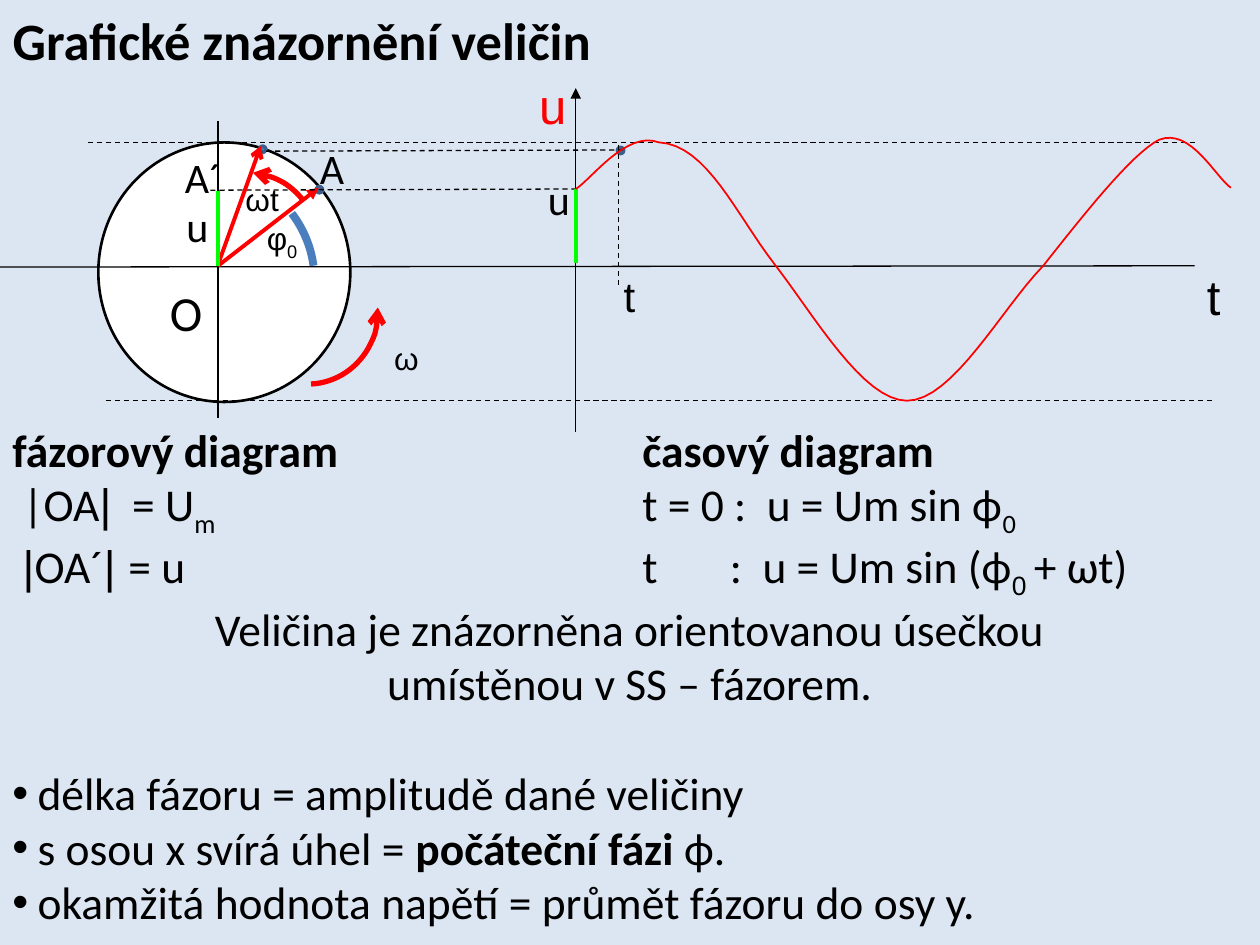
"""Build the slide on phasor and time diagrams of an alternating quantity."""
from lxml import etree
from pptx import Presentation
from pptx import util as u
from pptx.dml.color import RGBColor
from pptx.enum import dml, shapes, text
from pptx.oxml import ns

COLORS = {"back": "DCE6F2", "black": "000000", "white": "FFFFFF", "red": "FF0000",
          "green": "00FF00", "arc": "4B7EBC", "dot": "4F81BD", "rim": "3A5F8C"}


def stroke(shape, color, width, dashed=False, **ends):
    shape.line.color.rgb = RGBColor.from_string(COLORS[color])
    shape.line.width = u.Pt(width)
    if dashed:
        shape.line.dash_style = dml.MSO_LINE.DASH
    for end, kind in ends.items():
        etree.SubElement(shape.line._ln, ns.qn(f"a:{end}End"), type=kind)
    etree.SubElement(shape._element.spPr, ns.qn("a:effectLst"))


def add_span(para, words, size, font="Calibri", color="black", bold=False, sub=False):
    span = para.add_run()
    span.text = words
    for name, value in {"size": u.Pt(size), "name": font, "bold": bold}.items():
        setattr(span.font, name, value)
    span.font.color.rgb = RGBColor.from_string(COLORS[color])
    if sub:
        span.font._element.set("baseline", "-25000")


deck = Presentation()
deck.slide_width, deck.slide_height = u.Pt(720), u.Pt(540)
page = deck.slides.add_slide(deck.slide_layouts[5])
page.background.fill.solid()
page.background.fill.fore_color.rgb = RGBColor.from_string(COLORS["back"])

title = page.shapes.title
for name, value in {"left": 0, "top": 0.7, "width": 720, "height": 44}.items():
    setattr(title, name, u.Pt(value))
title.text_frame.vertical_anchor = text.MSO_ANCHOR.MIDDLE
title.text_frame.paragraphs[0].alignment = text.PP_ALIGN.LEFT
add_span(title.text_frame.paragraphs[0], "Grafické znázornění veličin", 30, bold=True)

ellipses = [(56.2, 81.4, 144, 148.3, "white", "black", 1.5)]
ellipses += [(x, y, 3.6, 3.6, "dot", "rim", 2)
             for x, y in [(180.7, 106.6), (148.3, 83.5), (352.8, 84.2)]]
for left, top, width, height, fill, rim, weight in ellipses:
    ellipse = page.shapes.add_shape(shapes.MSO_SHAPE.OVAL, u.Pt(left), u.Pt(top),
                                    u.Pt(width), u.Pt(height))
    ellipse.fill.solid()
    ellipse.fill.fore_color.rgb = RGBColor.from_string(COLORS[fill])
    stroke(ellipse, rim, weight)

thin, dashed = ("black", 0.75), ("black", 0.75, True)
lines = [
    (0, 152.6, 682.6, 151.9, thin, {}),
    (329, 247, 329, 50.4, thin, {"tail": "triangle"}),
    (50.4, 81.4, 682.6, 81.4, dashed, {}),
    (60.5, 229, 692.6, 229, dashed, {}),
    (124.6, 239, 124.6, 69.1, ("black", 1), {}),
    (124.6, 151.9, 182.2, 107.3, ("red", 2.25), {"tail": "triangle"}),
    (120.2, 108.7, 329, 108, dashed, {}),
    (146.9, 86.4, 355.7, 85.7, dashed, {}),
    (353.5, 82.8, 353.5, 163.4, dashed, {}),
    (124.6, 151.2, 149, 83.5, ("red", 2.25), {"tail": "arrow"}),
    (124.6, 109.4, 124.6, 151.9, ("green", 2.25), {}),
    (329, 108, 329, 150.5, ("green", 2.25), {}),
]
for x1, y1, x2, y2, look, ends in lines:
    line = page.shapes.add_connector(shapes.MSO_CONNECTOR.STRAIGHT,
                                     u.Pt(x1), u.Pt(y1), u.Pt(x2), u.Pt(y2))
    stroke(line, *look, **ends)

knots = [(329, 108), (337, 103.7), (357.8, 74.2), (376.6, 81.4), (403.9, 82.8),
         (420.5, 122.4), (442.8, 151.2), (465.1, 180), (493.2, 229), (518.4, 229),
         (544.3, 229), (572.4, 176.4), (596.2, 151.9), (617.8, 124.6), (646.6, 87.8),
         (662.4, 79.9), (680.4, 72.7), (694.8, 101.5), (703.4, 107.3)]
steps = 16
points = []
for first in range(0, len(knots) - 1, 3):
    for step in range(1, steps + 1):
        t = step / steps
        weights = [(1 - t) ** 3, 3 * t * (1 - t) ** 2, 3 * t * t * (1 - t), t ** 3]
        points.append([u.Pt(sum(w * knot[axis] for w, knot in zip(weights, knots[first:])))
                       for axis in (0, 1)])
builder = page.shapes.build_freeform(u.Pt(knots[0][0]), u.Pt(knots[0][1]))
builder.add_line_segments(points, close=False)
wave = builder.convert_to_shape()
wave.fill.background()
stroke(wave, "red", 1)

arcs = [
    (67.7, 101.5, 115.9, 103, 52.9, (162, 183.51), ("arc", 4.5), {}),
    (133.9, 137.5, 83.5, 80.6, 87.1, (162, 0), ("red", 3), {"head": "arrow"}),
    (97.9, 98.6, 83.5, 80.6, 345.2, (175.11, 203.2), ("red", 3), {"head": "arrow"}),
]
for left, top, width, height, turn, angles, look, ends in arcs:
    arc = page.shapes.add_shape(shapes.MSO_SHAPE.ARC, u.Pt(left), u.Pt(top),
                                u.Pt(width), u.Pt(height))
    arc.rotation = turn
    arc.adjustments[0], arc.adjustments[1] = angles
    arc.fill.background()
    stroke(arc, *look, **ends)

labels = [
    (90, 157.7, 44.6, "O", 28, "Calibri", "black"),
    (175.7, 77.8, 44.6, "A", 24, "Calibri", "black"),
    (98.6, 82.8, 43.2, "A´", 24, "Calibri", "black"),
    (301, 39.6, 28.1, "u", 28, "Arial", "red"),
    (682.6, 149, 28.1, "t", 28, "Arial", "black"),
    (145.4, 121.7, 33.1, "φ", 18, "Arial", "black"),
    (218.2, 190.1, 28.8, "ω", 18, "Arial", "black"),
    (133.2, 99.4, 33.8, "ωt", 18, "Arial", "black"),
    (99.4, 110.9, 44.6, "u", 24, "Calibri", "black"),
    (306, 95.8, 44.6, "u", 24, "Calibri", "black"),
    (349.2, 151.2, 28.1, "t", 24, "Arial", "black"),
]
for left, top, width, words, size, font, color in labels:
    box = page.shapes.add_textbox(u.Pt(left), u.Pt(top), u.Pt(width), u.Pt(1.2 * size + 7.4))
    box.text_frame.word_wrap = size > 18
    para = box.text_frame.paragraphs[0]
    add_span(para, words, size, font, color)
    if words == "φ":
        add_span(para, "0", size, font, color, sub=True)

bold, sub, arial = {"bold": True}, {"sub": True}, {"font": "Arial"}
paragraphs = [
    ("columns", [("fázorový diagram\tčasový diagram", bold)]),
    ("columns", [(" |OA", {}), ("|", arial), ("  = U", {}), ("m", sub),
                 ("\tt = 0 :  u = Um sin ϕ", {}), ("0", sub)]),
    ("columns", [(" ", {}), ("|", arial), ("OA´", {}), ("| ", arial),
                 ("= u\tt\t:  u = Um sin (ϕ", {}), ("0 ", {**arial, **sub}), ("+ ωt)", {})]),
    ("center", [("Veličina je znázorněna orientovanou úsečkou", {}), None,
                ("umístěnou v SS – fázorem.", {})]),
    ("bullet", [("délka fázoru = amplitudě dané veličiny", {})]),
    ("bullet", [("s osou x svírá úhel = ", {}), ("počáteční fázi ", bold), ("ϕ.", {})]),
    ("bullet", [("okamžitá hodnota napětí = průmět fázoru do osy y.", {})]),
]
body = page.shapes.add_textbox(0, u.Pt(240.5), u.Pt(720), u.Pt(290.9)).text_frame
body.word_wrap = True
body.vertical_anchor = text.MSO_ANCHOR.MIDDLE
previous = None
for kind, spans in paragraphs:
    para = body.add_paragraph() if previous else body.paragraphs[0]
    props = para._p.get_or_add_pPr()
    if kind == "center":
        para.alignment = text.PP_ALIGN.CENTER
    elif kind == "columns":
        stops = etree.SubElement(props, ns.qn("a:tabLst"))
        for stop in (360, 410):
            etree.SubElement(stops, ns.qn("a:tab"), pos=str(u.Pt(stop)), algn="l")
    else:
        props.set("marL", str(u.Pt(14.4)))
        props.set("indent", str(u.Pt(-14.4)))
        if previous != kind:
            para.space_before = u.Pt(31.7)
        etree.SubElement(props, ns.qn("a:buFont"), typeface="Arial")
        etree.SubElement(props, ns.qn("a:buChar"), char="•")
    for span in spans:
        if span is None:
            para.add_line_break()
        else:
            add_span(para, span[0], 26, **span[1])
    previous = kind

deck.save("out.pptx")
